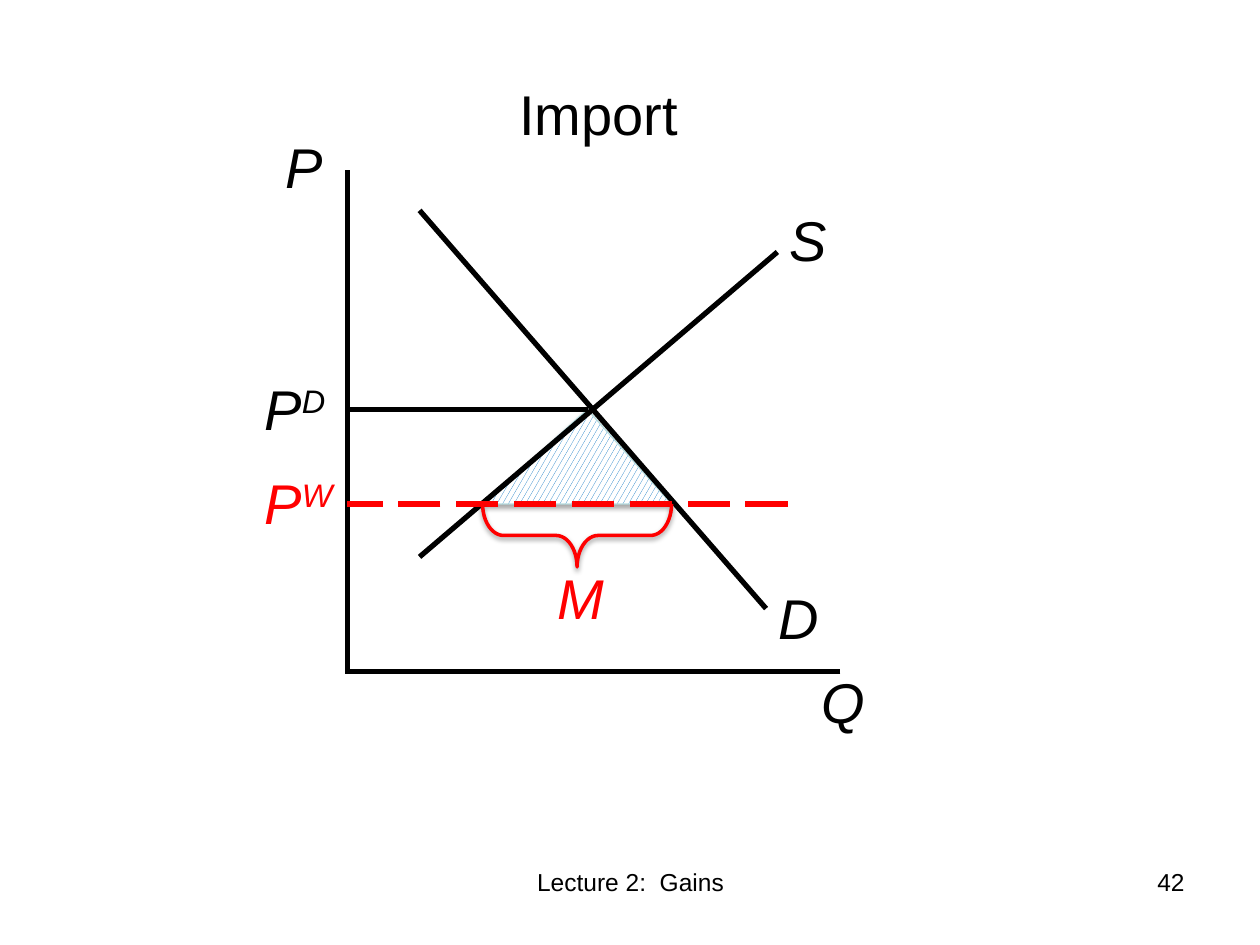
from lxml.etree import SubElement
from pptx import Presentation
from pptx.dml.color import RGBColor
from pptx.enum.dml import MSO_LINE, MSO_PATTERN
from pptx.enum.shapes import MSO_CONNECTOR, MSO_SHAPE
from pptx.enum.text import MSO_ANCHOR, PP_ALIGN
from pptx.oxml.ns import qn
from pptx.util import Inches, Pt

BLACK, RED, WHITE = "000000", "FF0000", "FFFFFF"
HATCH, PALE_TEAL = "0070C0", "B6DCDF"

# label, superscript, left, top, colour
CURVE_LABELS = [
    ("S", "", 6.17, 1.58, BLACK),
    ("D", "", 6.08, 4.58, BLACK),
    ("Q", "", 6.42, 5.25, BLACK),
    ("P", "", 2.17, 1, BLACK),
    ("P", "D", 2, 2.92, BLACK),
    ("P", "W", 2, 3.67, RED),
    ("M", "", 4.33, 4.42, RED),
]
# start, end, colour, dash
LINES = [
    ((2.76, 1.35), (2.76, 5.35), BLACK, None),  # price axis
    ((6.17, 2), (3.33, 4.42), BLACK, None),  # supply
    ((6.67, 5.33), (2.75, 5.33), BLACK, None),  # quantity axis
    ((6.08, 4.83), (3.33, 1.67), BLACK, None),  # demand
    ((4.67, 3.25), (2.75, 3.25), BLACK, None),  # domestic price
    ((6.25, 4), (2.75, 4), RED, MSO_LINE.LONG_DASH),  # world price
]
# text, box, alignment
FOOTERS = [
    ("42", (7.17, 6.83, 2.33, 0.52), PP_ALIGN.RIGHT),
    ("Lecture 2:  Gains", (3.42, 6.83, 3.17, 0.52), PP_ALIGN.CENTER),
]


def rgb(color):
    return RGBColor.from_string(color)


def inches(*lengths):
    return [Inches(length) for length in lengths]


def format_run(run, size, color=BLACK, italic=False):
    run.font.name = "Arial"
    run.font.size = Pt(size)
    run.font.italic = italic
    run.font.color.rgb = rgb(color)


def add_text(slide, text, box, size, color=BLACK, italic=False,
             align=PP_ALIGN.LEFT, superscript=""):
    frame = slide.shapes.add_textbox(*inches(*box)).text_frame
    frame.word_wrap = True
    paragraph = frame.paragraphs[0]
    paragraph.text = text
    paragraph.alignment = align
    if superscript:
        raised = paragraph.add_run()
        raised.text = superscript
        raised.font._element.set("baseline", "30000")
    for run in paragraph.runs:
        format_run(run, size, color, italic)


def add_line(slide, start, end, color, dash):
    line = slide.shapes.add_connector(
        MSO_CONNECTOR.STRAIGHT, *inches(*start, *end))
    line.line.color.rgb = rgb(color)
    line.line.width = Pt(3)
    if dash:
        line.line.dash_style = dash
    SubElement(line._element.spPr, qn("a:effectLst"))


def add_shadowed_shape(slide, preset, box, line_color, line_width,
                       distance, opacity):
    """Add a preset shape with a soft shadow straight below it."""
    shape = slide.shapes.add_shape(preset, *inches(*box))
    shape.line.color.rgb = rgb(line_color)
    shape.line.width = Pt(line_width)
    shape.shadow.inherit = False
    effects = shape._element.spPr.find(qn("a:effectLst"))
    shadow = SubElement(effects, qn("a:outerShdw"), blurRad=str(Pt(3.1)),
                        dist=str(Pt(distance)), dir="5400000", rotWithShape="0")
    tint = SubElement(shadow, qn("a:srgbClr"), val=BLACK)
    SubElement(tint, qn("a:alpha"), val=str(opacity * 1000))
    return shape


def main():
    prs = Presentation()
    prs.slide_width, prs.slide_height = inches(10, 7.5)
    slide = prs.slides.add_slide(prs.slide_layouts[5])

    title = slide.shapes.title
    title.left, title.top, title.width, title.height = inches(3.25, 0.58, 3, 0.64)
    title.text_frame.text = "Import"
    title.text_frame.vertical_anchor = MSO_ANCHOR.TOP
    title.text_frame.paragraphs[0].alignment = PP_ALIGN.CENTER
    format_run(title.text_frame.paragraphs[0].runs[0], 32)

    gains = add_shadowed_shape(slide, MSO_SHAPE.ISOSCELES_TRIANGLE,
                               (3.83, 3.25, 1.5, 0.75), PALE_TEAL, 0.75, 1.8, 35)
    gains.adjustments[0] = 0.555
    gains.fill.patterned()
    gains.fill.pattern = MSO_PATTERN.LARGE_CONFETTI
    gains.fill.fore_color.rgb = rgb(HATCH)
    gains.fill.back_color.rgb = rgb(WHITE)

    for line in LINES:
        add_line(slide, *line)

    imports = add_shadowed_shape(slide, MSO_SHAPE.RIGHT_BRACE,
                                 (4.33, 3.5, 0.5, 1.5), RED, 2, 1.6, 38)
    imports.rotation = 90
    imports.adjustments[0] = 0.333
    imports.fill.background()

    for label, superscript, left, top, color in CURVE_LABELS:
        add_text(slide, label, (left, top, 2, 0.64), 32, color, italic=True,
                 superscript=superscript)
    for text, box, align in FOOTERS:
        add_text(slide, text, box, 14, align=align)

    prs.save("out.pptx")


if __name__ == "__main__":
    main()
